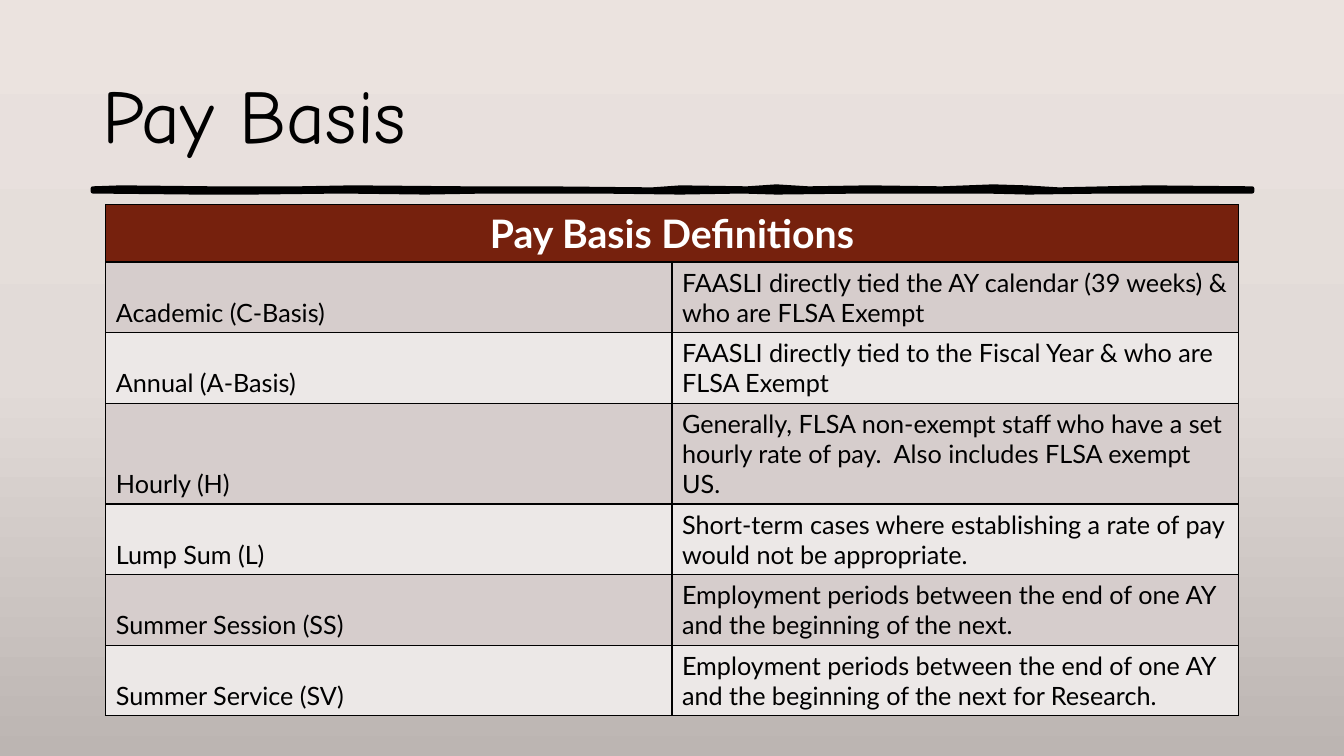
from copy import deepcopy

from pptx import Presentation
from pptx.dml.color import RGBColor
from pptx.enum.text import MSO_ANCHOR as Anchor, PP_ALIGN as Align
from pptx.oxml import parse_xml
from pptx.oxml.ns import nsdecls, qn
from pptx.util import Inches, Pt

COLORS = {
    "ink": "000000", "white": "FFFFFF", "header": "76210D",
    "band_dark": "D6CDCC", "band_light": "ECE8E7",
    "sky": "EBE3DF", "middle": "E2DBD8", "ground": "BCB5B2",
}
DEFINITIONS = [
    ("Academic (C-Basis)",
     "FAASLI directly tied the AY calendar (39 weeks) & who are FLSA Exempt"),
    ("Annual (A-Basis)",
     "FAASLI directly tied to the Fiscal Year & who are FLSA Exempt"),
    ("Hourly (H)",
     "Generally, FLSA non-exempt staff who have a set hourly rate of pay.  "
     "Also includes FLSA exempt US."),
    ("Lump Sum (L)",
     "Short-term cases where establishing a rate of pay would not be appropriate."),
    ("Summer Session (SS)",
     "Employment periods between the end of one AY and the beginning of the next."),
    ("Summer Service (SV)",
     "Employment periods between the end of one AY and the beginning of the next "
     "for Research."),
]
ROW_HEIGHTS = [0.57, 0.7, 0.7, 1.0, 0.7, 0.7, 0.7]
BRUSH_TOP = [
    (0.92, 1.87), (1.2, 1.86), (2.12, 1.87), (2.96, 1.87), (3.5, 1.86), (4.65, 1.87),
    (5.4, 1.87), (6.47, 1.88), (6.75, 1.86), (7.41, 1.87), (7.7, 1.85), (8.02, 1.87),
    (8.62, 1.86), (9.34, 1.87), (9.85, 1.85), (10.17, 1.86), (10.5, 1.88),
    (11.4, 1.86), (12.42, 1.87),
]
BRUSH_BOTTOM = [
    (12.42, 1.9), (11.58, 1.9), (10.98, 1.9), (10.2, 1.91), (9.77, 1.9), (9.17, 1.9),
    (8.56, 1.9), (7.7, 1.91), (7.36, 1.9), (6.75, 1.91), (5.92, 1.9), (4.83, 1.9),
    (4.22, 1.91), (3.39, 1.9), (2.5, 1.91), (1.95, 1.91), (0.92, 1.9),
]


def rgb(name):
    return RGBColor.from_string(COLORS[name])


class SlideBuilder:
    def __init__(self, page, heading_font, body_font):
        self.page = page
        self.heading_font = heading_font
        self.body_font = body_font

    def background(self, stops):
        """Fill the page from top to bottom with (position, color name) stops."""
        fill = self.page.background.fill
        fill.gradient()
        fill.gradient_angle = 270
        stop_list = self.page.element.find(".//" + qn("a:gsLst"))
        while len(stop_list) < len(stops):
            stop_list.append(deepcopy(stop_list[0]))
        for stop, (position, color) in zip(fill.gradient_stops, stops):
            stop.position = position
            stop.color.rgb = rgb(color)

    def set_text(self, frame, text, size, color, font, bold=False, align=Align.LEFT):
        frame.word_wrap = True
        para = frame.paragraphs[0]
        para.text = text
        para.alignment = align
        para.font.name = font
        para.font.size = Pt(size)
        para.font.bold = bold
        para.font.color.rgb = rgb(color)

    def title(self, text, left, top, width, height):
        box = self.page.shapes.add_textbox(
            Inches(left), Inches(top), Inches(width), Inches(height))
        box.text_frame.vertical_anchor = Anchor.MIDDLE
        self.set_text(box.text_frame, text, 54, "ink", self.heading_font)

    def brush_stroke(self, outline):
        start, *rest = [(Inches(x), Inches(y)) for x, y in outline]
        builder = self.page.shapes.build_freeform(*start)
        builder.add_line_segments(rest, close=True)
        stroke = builder.convert_to_shape()
        stroke.shadow.inherit = False
        stroke.fill.solid()
        stroke.fill.fore_color.rgb = rgb("ink")
        stroke.line.color.rgb = rgb("ink")
        stroke.line.width = Pt(3)

    def style_cell(self, cell, fill):
        properties = cell._tc.get_or_add_tcPr()
        for side in ("lnL", "lnR", "lnT", "lnB"):
            properties.append(parse_xml(
                f'<a:{side} {nsdecls("a")} w="{Pt(1)}"><a:solidFill>'
                f'<a:srgbClr val="{COLORS["ink"]}"/></a:solidFill></a:{side}>'))
        cell.fill.solid()
        cell.fill.fore_color.rgb = rgb(fill)

    def definition_table(self, heading, rows, left, top, width, heights):
        table = self.page.shapes.add_table(
            len(heights), 2, Inches(left), Inches(top),
            Inches(width), Inches(sum(heights))).table
        for row, height in zip(table.rows, heights):
            row.height = Inches(height)
        for cell in table.rows[0].cells:
            self.style_cell(cell, "header")
        table.cell(0, 0).merge(table.cell(0, 1))
        self.set_text(table.cell(0, 0).text_frame, heading, 28, "white",
                      self.body_font, bold=True, align=Align.CENTER)
        for index, texts in enumerate(rows, start=1):
            band = "band_dark" if index % 2 else "band_light"
            for cell, text in zip(table.rows[index].cells, texts):
                self.style_cell(cell, band)
                cell.vertical_anchor = Anchor.BOTTOM
                self.set_text(cell.text_frame, text, 18, "ink", self.body_font)


def main():
    deck = Presentation()
    deck.slide_width, deck.slide_height = Inches(13.33), Inches(7.5)
    page = deck.slides.add_slide(deck.slide_layouts[6])
    slide = SlideBuilder(page, "Comic Neue", "Lato")
    slide.background([(0, "sky"), (0.5, "middle"), (1, "ground")])
    slide.brush_stroke(BRUSH_TOP + BRUSH_BOTTOM)
    slide.title("Pay Basis", 0.92, 0.4, 11.5, 1.45)
    slide.definition_table("Pay Basis Definitions", DEFINITIONS,
                           1.05, 2.03, 11.23, ROW_HEIGHTS)
    deck.save("out.pptx")


if __name__ == "__main__":
    main()
